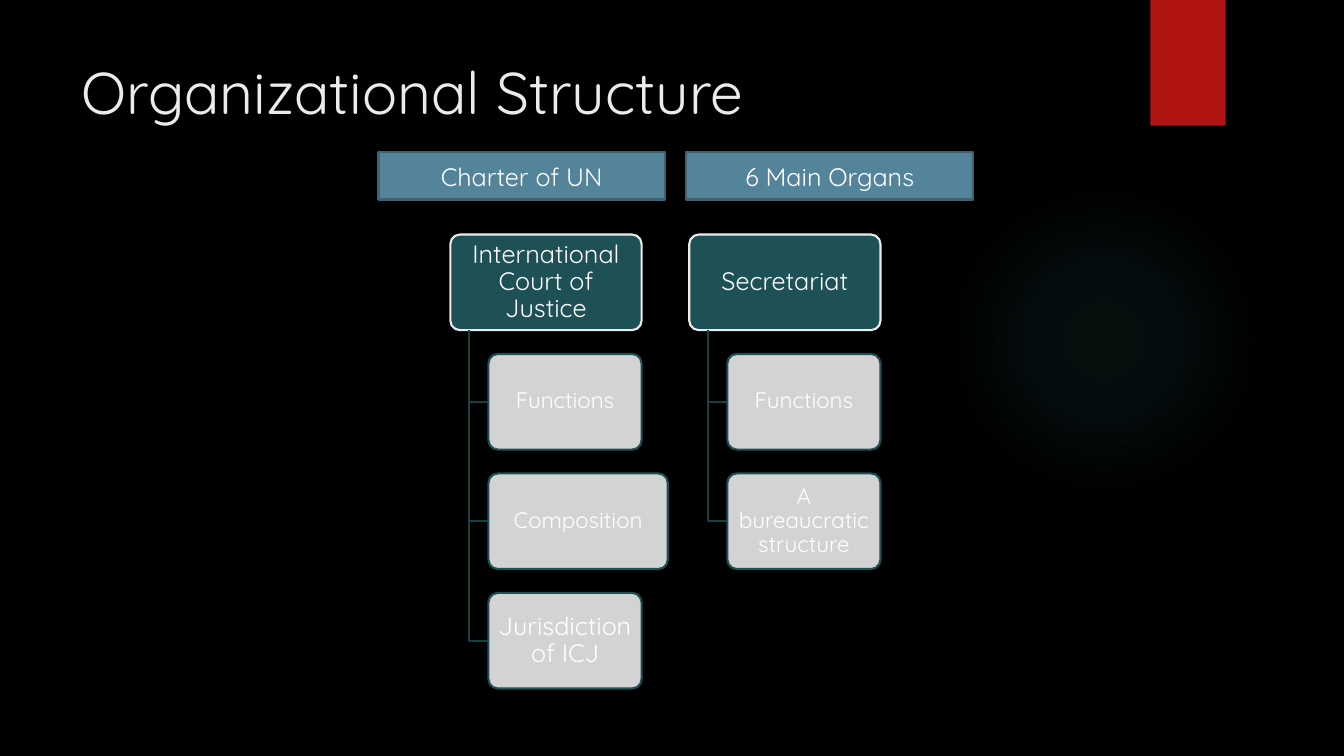
from dataclasses import dataclass

from lxml.etree import SubElement
from pptx import Presentation
from pptx.dml.color import RGBColor
from pptx.enum.shapes import MSO_SHAPE
from pptx.enum.text import MSO_ANCHOR, MSO_AUTO_SIZE, PP_ALIGN
from pptx.oxml import parse_xml
from pptx.oxml.ns import nsdecls, qn
from pptx.util import Cm, Pt


@dataclass(frozen=True)
class Theme:
    font: str = "Quicksand"
    background: str = "000000"
    light: str = "EBEBEB"
    white: str = "FFFFFF"
    ribbon: str = "B01513"
    glow: str = "50B9C1"
    banner: str = "54849A"
    banner_edge: str = "3E6272"
    organ: str = "1E5155"
    branch: str = "184144"
    title_size: int = 42
    label_size: int = 18
    topic_size: int = 16
    line_width: float = 1.5


theme = Theme()


def write(shape, text, *, size, color=theme.white, align=PP_ALIGN.CENTER,
          anchor=MSO_ANCHOR.MIDDLE, spacing=1.0, inset=0.25):
    frame = shape.text_frame
    frame.word_wrap = True
    frame.auto_size = MSO_AUTO_SIZE.NONE
    frame.vertical_anchor = anchor
    frame.margin_left = frame.margin_right = Cm(inset)
    frame.margin_top = frame.margin_bottom = Cm(inset / 2)
    paragraph = frame.paragraphs[0]
    paragraph.alignment = align
    paragraph.line_spacing = spacing
    run = paragraph.add_run()
    run.text = text
    run.font.name = theme.font
    run.font.size = Pt(size)
    run.font.color.rgb = RGBColor.from_string(color)


def add_block(kind, left, top, width, height, fill, edge=None):
    """Add a shape measured in centimetres; without an edge colour it has no outline."""
    block = slide.shapes.add_shape(kind, Cm(left), Cm(top), Cm(width), Cm(height))
    block.shadow.inherit = False
    block.fill.solid()
    block.fill.fore_color.rgb = RGBColor.from_string(fill)
    if edge:
        block.line.color.rgb = RGBColor.from_string(edge)
        block.line.width = Pt(theme.line_width)
    else:
        block.line.fill.background()
    return block


deck = Presentation()
deck.slide_width, deck.slide_height = Cm(33.87), Cm(19.05)
slide = deck.slides.add_slide(deck.slide_layouts[5])
slide.background.fill.solid()
slide.background.fill.fore_color.rgb = RGBColor.from_string(theme.background)

# Backdrop: a faint round glow and the red ribbon
glow = add_block(MSO_SHAPE.OVAL, 23.9, 4.65, 7.82, 7.82, theme.glow)
stops = "".join(
    f'<a:gs pos="{position * 1000}"><a:srgbClr val="{theme.glow}">'
    f'<a:alpha val="{opacity * 1000}"/></a:srgbClr></a:gs>'
    for position, opacity in [(0, 7), (36, 6), (69, 0)]
)
gradient = parse_xml(
    f'<a:gradFill {nsdecls("a")}><a:gsLst>{stops}</a:gsLst><a:path path="circle">'
    '<a:fillToRect l="50000" t="50000" r="50000" b="50000"/></a:path></a:gradFill>'
)
glow_properties = glow.element.spPr
glow_properties.replace(glow_properties.find(qn("a:solidFill")), gradient)
add_block(MSO_SHAPE.RECTANGLE, 28.99, 0, 1.9, 3.17, theme.ribbon)

title = slide.shapes.title
title.left, title.top, title.width, title.height = Cm(1.8), Cm(1.27), Cm(26.14), Cm(3.89)
write(title, "Organizational Structure", size=theme.title_size, color=theme.light,
      align=PP_ALIGN.LEFT, anchor=MSO_ANCHOR.TOP)

for left, heading in [(9.54, "Charter of UN"), (17.3, "6 Main Organs")]:
    banner = add_block(MSO_SHAPE.RECTANGLE, left, 3.84, 7.22, 1.19,
                       theme.banner, theme.banner_edge)
    write(banner, heading, size=theme.label_size)

# Each organ heads a column of topics: text, box width, type size
organs = [
    ("International Court of Justice", [
        ("Functions", 3.86, theme.topic_size),
        ("Composition", 4.52, theme.topic_size),
        ("Jurisdiction of ICJ", 3.86, theme.label_size),
    ]),
    ("Secretariat", [
        ("Functions", 3.86, theme.topic_size),
        ("A bureaucratic structure", 3.86, theme.topic_size),
    ]),
]
first_left, column_pitch = 11.35, 6.02
first_top, row_pitch = 5.91, 3.01
organ_width, box_height = 4.82, 2.41
trunk_indent, topic_indent = 0.48, 0.96

for column, (organ, topics) in enumerate(organs):
    left = first_left + column * column_pitch
    organ_box = add_block(MSO_SHAPE.ROUNDED_RECTANGLE, left, first_top, organ_width,
                          box_height, theme.organ, theme.light)
    organ_box.adjustments[0] = 0.1
    write(organ_box, organ, size=theme.label_size, spacing=0.9, inset=0.1)

    trunk = left + trunk_indent
    topic_left = left + topic_indent
    for row, (topic, width, size) in enumerate(topics, start=1):
        top = first_top + row * row_pitch
        middle = top + box_height / 2
        outline = slide.shapes.build_freeform(Cm(trunk), Cm(first_top + box_height))
        outline.add_line_segments(
            [(Cm(trunk), Cm(middle)), (Cm(topic_left), Cm(middle))], close=False)
        branch = outline.convert_to_shape()
        branch.shadow.inherit = False
        branch.fill.background()
        branch.line.color.rgb = RGBColor.from_string(theme.branch)
        branch.line.width = Pt(theme.line_width)

        topic_box = add_block(MSO_SHAPE.ROUNDED_RECTANGLE, topic_left, top, width,
                              box_height, theme.light, theme.organ)
        topic_box.adjustments[0] = 0.1
        tint = topic_box.element.spPr.find(qn("a:solidFill"))[0]
        SubElement(tint, qn("a:alpha"), val="90000")
        write(topic_box, topic, size=size, spacing=0.9, inset=0.1)

deck.save("out.pptx")
